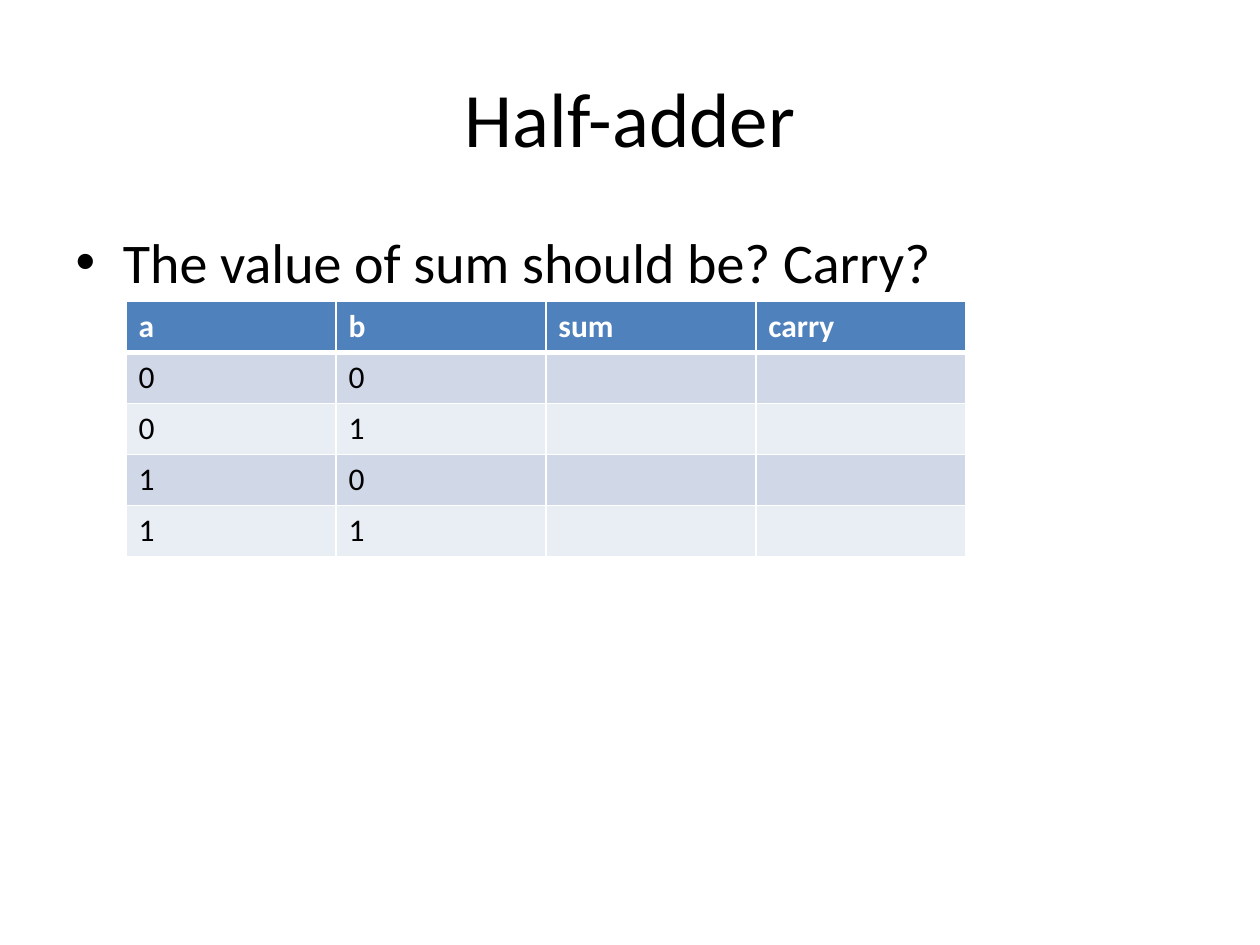
"""Build the half-adder slide with its truth table."""
from dataclasses import dataclass

import pptx
import pptx.dml.color
import pptx.enum.text
import pptx.oxml
import pptx.oxml.ns
import pptx.util
from pptx.util import Cm

RGB = pptx.dml.color.RGBColor.from_string


@dataclass(frozen=True)
class Theme:
    """Colours, font and type sizes of the slide."""
    font: str = "Calibri"
    text: str = "000000"
    light: str = "FFFFFF"
    header: str = "4F81BD"
    bands: tuple = ("D0D8E8", "E9EDF4")
    title_size: int = 44
    body_size: int = 32
    table_size: int = 18
    thin: int = 1
    thick: int = 3


THEME = Theme()
TRUTH_TABLE = [
    ("a", "b", "sum", "carry"),
    *((a, b, "", "") for a in "01" for b in "01"),
]


def add_run(paragraph, text, size, color=THEME.text, bold=False):
    """Append one formatted run to a paragraph."""
    run = paragraph.add_run()
    run.text = text
    run.font.name = THEME.font
    run.font.size = pptx.util.Pt(size)
    run.font.bold = bold
    run.font.color.rgb = RGB(color)


def fill_placeholder(shape, box, text, size, anchor, alignment):
    """Move a placeholder and write its single paragraph."""
    shape.left, shape.top, shape.width, shape.height = map(Cm, box)
    shape.text_frame.vertical_anchor = anchor
    paragraph = shape.text_frame.paragraphs[0]
    paragraph.alignment = alignment
    add_run(paragraph, text, size)


def set_border(cell, side, width):
    """Draw one light border line on a cell."""
    line = pptx.oxml.parse_xml(
        f'<a:ln{side} {pptx.oxml.ns.nsdecls("a")} w="{pptx.util.Pt(width)}">'
        f'<a:solidFill><a:srgbClr val="{THEME.light}"/></a:solidFill></a:ln{side}>'
    )
    cell._tc.get_or_add_tcPr().append(line)


def format_cell(cell, text, row):
    """Write, border and fill one cell according to its row."""
    is_header = row == 0
    widths = {
        "L": THEME.thin,
        "R": THEME.thin,
        "T": THEME.thick if row == 1 else THEME.thin,
        "B": THEME.thick if is_header else THEME.thin,
    }
    for side, width in widths.items():
        set_border(cell, side, width)
    cell.fill.solid()
    cell.fill.fore_color.rgb = RGB(THEME.header if is_header else THEME.bands[(row - 1) % 2])
    if text:
        color = THEME.light if is_header else THEME.text
        add_run(cell.text_frame.paragraphs[0], text, THEME.table_size, color, is_header)


def add_truth_table(slide, rows, box):
    """Add the truth table with equal rows and columns."""
    table = slide.shapes.add_table(len(rows), len(rows[0]), *map(Cm, box)).table
    for row, texts in enumerate(rows):
        for column, text in enumerate(texts):
            format_cell(table.cell(row, column), text, row)


def main():
    """Create the slide and save it."""
    presentation = pptx.Presentation()
    presentation.slide_width, presentation.slide_height = Cm(25.4), Cm(19.05)
    slide = presentation.slides.add_slide(presentation.slide_layouts[1])
    anchors, alignments = pptx.enum.text.MSO_ANCHOR, pptx.enum.text.PP_ALIGN
    fill_placeholder(slide.shapes.title, (1.27, 0.76, 22.86, 3.18), "Half-adder",
                     THEME.title_size, anchors.MIDDLE, alignments.CENTER)
    fill_placeholder(slide.placeholders[1], (1.27, 4.45, 22.86, 12.57),
                     "The value of sum should be? Carry?",
                     THEME.body_size, anchors.TOP, alignments.LEFT)
    add_truth_table(slide, TRUTH_TABLE, (2.54, 6.07, 16.93, 5.14))
    presentation.save("out.pptx")


if __name__ == "__main__":
    main()
